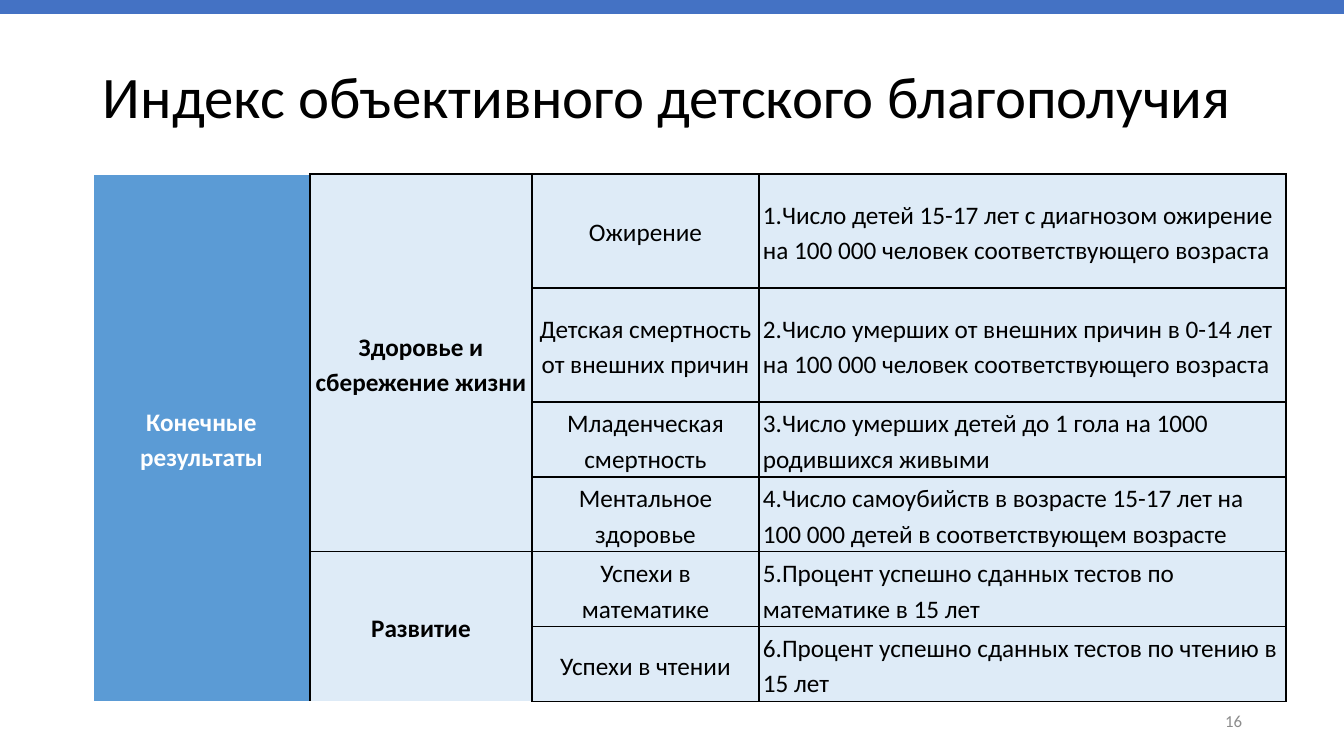
from lxml import etree
from pptx import Presentation
from pptx.dml.color import RGBColor
from pptx.enum.shapes import MSO_SHAPE
from pptx.enum.text import MSO_ANCHOR, PP_ALIGN
from pptx.oxml.ns import qn
from pptx.util import Pt

LEFT, CENTER, RIGHT = PP_ALIGN.LEFT, PP_ALIGN.CENTER, PP_ALIGN.RIGHT
MIDDLE, BOTTOM = MSO_ANCHOR.MIDDLE, MSO_ANCHOR.BOTTOM
PX = 914400 / 100.8
COLORS = {
    "bar": "4472C4",
    "result": "5B9BD5",
    "pale": "DEEBF7",
    "black": "000000",
    "white": "FFFFFF",
    "gray": "8C8C8C",
}


def write(frame, text, size=18, color="black", bold=False, align=LEFT, spacing=1.15, after=8):
    frame.word_wrap = True
    para = frame.paragraphs[0]
    para.alignment = align
    para.line_spacing = spacing
    para.space_after = Pt(after)
    span = para.add_run()
    span.text = text
    span.font.name = "Calibri"
    span.font.size = Pt(size)
    span.font.bold = bold
    span.font.color.rgb = RGBColor.from_string(COLORS[color])


def add_borders(cell, edges):
    properties = cell._tc.get_or_add_tcPr()
    for position, (side, color, width) in enumerate(edges):
        line = etree.Element(qn(f"a:ln{side}"), w=str(Pt(width)))
        fill = etree.SubElement(line, qn("a:solidFill"))
        etree.SubElement(fill, qn("a:srgbClr"), val=COLORS[color])
        properties.insert(position, line)


deck = Presentation()
deck.slide_width, deck.slide_height = round(1344 * PX), round(756 * PX)
page = deck.slides.add_slide(deck.slide_layouts[6])

bar = page.shapes.add_shape(MSO_SHAPE.RECTANGLE, 0, 0, deck.slide_width, round(14 * PX))
bar.shadow.inherit = False
bar.fill.solid()
bar.fill.fore_color.rgb = RGBColor.from_string(COLORS["bar"])
bar.line.fill.background()

labels = [
    ((93, 33, 1159, 103), "Индекс объективного детского благополучия", BOTTOM,
     {"size": 42, "spacing": 0.9, "after": 0}),
    ((950, 701, 302, 40), "16", MIDDLE,
     {"size": 12, "color": "gray", "align": RIGHT, "spacing": 1.0, "after": 6}),
]
for place, text, anchor, style in labels:
    box = page.shapes.add_textbox(*[round(length * PX) for length in place])
    box.text_frame.vertical_anchor = anchor
    write(box.text_frame, text, **style)

column_widths = [217, 222, 227, 527]
row_heights = [114, 114, 75, 75, 75, 75]
indicators = [
    ("Ожирение", "1.Число детей 15-17 лет с диагнозом ожирение на 100 000 человек соответствующего возраста"),
    ("Детская смертность от внешних причин",
     "2.Число умерших от внешних причин в 0-14 лет на 100 000 человек соответствующего возраста"),
    ("Младенческая смертность", "3.Число умерших детей до 1 гола на 1000 родившихся живыми"),
    ("Ментальное здоровье",
     "4.Число самоубийств в возрасте 15-17 лет на 100 000 детей в соответствующем возрасте"),
    ("Успехи в математике", "5.Процент успешно сданных тестов по математике в 15 лет"),
    ("Успехи в чтении", "6.Процент успешно сданных тестов по чтению в 15 лет"),
]
groups = [
    (0, 5, 0, "Конечные результаты", "white"),
    (0, 3, 1, "Здоровье и сбережение жизни", "black"),
    (4, 5, 1, "Развитие", "black"),
]

table = page.shapes.add_table(
    len(row_heights), len(column_widths), round(93 * PX), round(174 * PX),
    round(sum(column_widths) * PX), round(sum(row_heights) * PX),
).table
table.first_row = table.horz_banding = False
for column, width in zip(table.columns, column_widths):
    column.width = round(width * PX)
for row, height in zip(table.rows, row_heights):
    row.height = round(height * PX)

for first, last, column, text, color in groups:
    table.cell(first, column).merge(table.cell(last, column))
    write(table.cell(first, column).text_frame, text, color=color, bold=True, align=CENTER)
for row, (topic, measure) in enumerate(indicators):
    write(table.cell(row, 2).text_frame, topic, align=CENTER)
    write(table.cell(row, 3).text_frame, measure)

last_row = len(row_heights) - 1
for row in range(len(row_heights)):
    for column in range(len(column_widths)):
        cell = table.cell(row, column)
        cell.vertical_anchor = MIDDLE
        cell.margin_left = cell.margin_right = round(4 * PX)
        cell.margin_top = cell.margin_bottom = 0
        cell.fill.solid()
        cell.fill.fore_color.rgb = RGBColor.from_string(COLORS["pale" if column else "result"])
        outer = "black" if column else "white"
        edges = [("L", outer, 1), ("R", "black", 1)]
        if not cell.is_spanned:
            edges.append(("T", outer, 1))
        if row == last_row or not table.cell(row + 1, column).is_spanned:
            edges.append(("B", outer, 1 if column else 3))
        add_borders(cell, edges)

deck.save("out.pptx")
